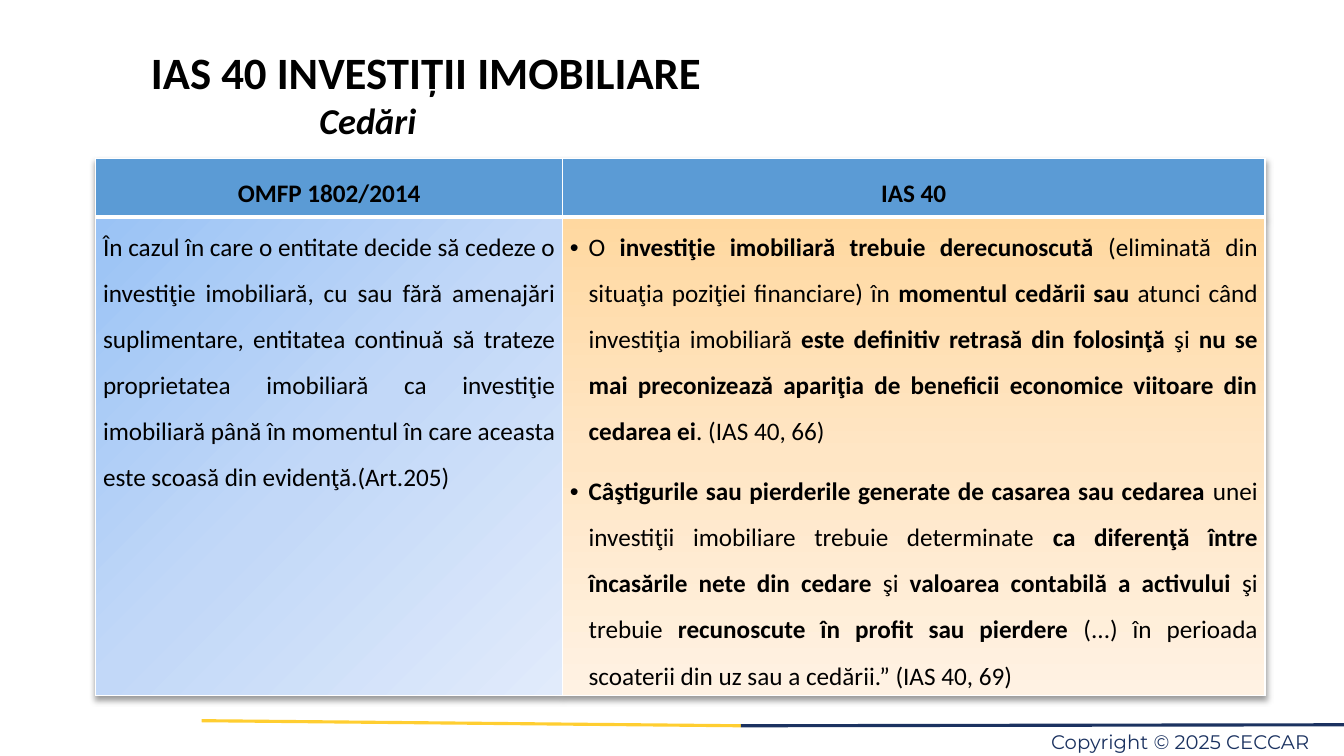
from lxml import etree
from pptx import Presentation
from pptx.dml.color import RGBColor
from pptx.enum import shapes, text
from pptx.oxml import ns
from pptx.util import Pt

BLACK = RGBColor(0x00, 0x00, 0x00)
WHITE = RGBColor(0xFF, 0xFF, 0xFF)
GOLD = RGBColor(0xFF, 0xCE, 0x31)
NAVY = RGBColor(0x1B, 0x32, 0x60)
BLUE = RGBColor(0x5B, 0x9B, 0xD5)
SKY = [RGBColor(0x9A, 0xC3, 0xF5), RGBColor(0xC2, 0xD8, 0xF8), RGBColor(0xE1, 0xEB, 0xFB)]
PEACH = [RGBColor(0xFF, 0xD8, 0xA0), RGBColor(0xFF, 0xE6, 0xC5), RGBColor(0xFF, 0xF2, 0xE3)]
MID, RIGHT, FULL = text.PP_ALIGN.CENTER, text.PP_ALIGN.RIGHT, text.PP_ALIGN.JUSTIFY

HEADS = ["OMFP 1802/2014", "IAS 40"]
LOCAL = ["În cazul în care o entitate decide să cedeze o investiţie imobiliară, cu sau fără "
         "amenajări suplimentare, entitatea continuă să trateze proprietatea imobiliară ca "
         "investiţie imobiliară până în momentul în care aceasta este scoasă din "
         "evidenţă.(Art.205)"]
GLOBAL = ["O *investiţie imobiliară trebuie derecunoscută* (eliminată din situaţia poziţiei "
          "financiare) în *momentul cedării sau* atunci când investiţia imobiliară *este "
          "definitiv retrasă din folosinţă* şi *nu se mai preconizează apariţia de beneficii "
          "economice viitoare din cedarea ei*. (IAS 40, 66)",
          "*Câştigurile sau pierderile generate de casarea sau cedarea* unei investiţii "
          "imobiliare trebuie determinate *ca diferenţă între încasările nete din cedare* şi "
          "*valoarea contabilă a activului* şi trebuie *recunoscute în profit sau pierdere "
          "*(...) în perioada scoaterii din uz sau a cedării.” (IAS 40, 69)"]


class Deck:
    font = "Calibri"

    def __init__(self, wide, high):
        self.prs = Presentation()
        self.prs.slide_width, self.prs.slide_height = Pt(wide), Pt(high)
        self.slide = self.prs.slides.add_slide(self.prs.slide_layouts[6])

    def add(self, parent, tag, **attrs):
        node = etree.SubElement(parent, ns.qn(tag))
        for key, val in attrs.items():
            node.set(key, str(val))
        return node

    def line(self, x1, y1, x2, y2, color):
        line = self.slide.shapes.add_connector(
            shapes.MSO_CONNECTOR.STRAIGHT, Pt(x1), Pt(y1), Pt(x2), Pt(y2))
        line.line.color.rgb = color
        line.line.width = Pt(2.25)
        self.add(line.element.spPr, "a:effectLst")

    def prose(self, frame, paras, size, align, space, color=BLACK, font=None,
              slant=None, bullet=False, indent=0):
        for i, words in enumerate(paras):
            para = frame.add_paragraph() if i else frame.paragraphs[0]
            props = para._p.get_or_add_pPr()
            if bullet:
                indent = 13.5
                props.set("indent", str(-Pt(indent)))
                self.add(props, "a:buFont", typeface="Arial")
                self.add(props, "a:buChar", char="•")
            if indent:
                props.set("marL", str(Pt(indent)))
            para.alignment, para.line_spacing = align, space
            if i:
                para.space_before = Pt(10)
            for j, part in enumerate(words.split("*")):
                if part:
                    run = para.add_run()
                    run.text = part
                    run.font.name, run.font.size = font or self.font, Pt(size)
                    run.font.bold, run.font.italic = j % 2 == 1, slant
                    run.font.color.rgb = color

    def label(self, x, y, wide, high, words, size, align, space, inset=True, **style):
        box = self.slide.shapes.add_textbox(Pt(x), Pt(y), Pt(wide), Pt(high))
        frame = box.text_frame
        frame.word_wrap = True
        if not inset:
            frame.margin_left = frame.margin_right = Pt(0)
            frame.margin_top = frame.margin_bottom = Pt(0)
        self.prose(frame, [words], size, align, space, **style)

    def table(self, x, y, cols, rows):
        frame = self.slide.shapes.add_table(
            len(rows), len(cols), Pt(x), Pt(y), Pt(sum(cols)), Pt(sum(rows)))
        table = frame.table
        table.first_row = table.horz_banding = False
        for col, wide in zip(table.columns, cols):
            col.width = Pt(wide)
        for row, high in zip(table.rows, rows):
            row.height = Pt(high)
        props = table._tbl.tblPr
        glow = self.add(props, "a:effectLst")
        cast = self.add(glow, "a:outerShdw", blurRad=Pt(4), dist=Pt(3), dir=5400000)
        shade = self.add(cast, "a:srgbClr", val=BLACK)
        self.add(shade, "a:alpha", val=40000)
        props.insert(0, glow)
        return table

    def edge(self, cell, top, base):
        props = cell._tc.get_or_add_tcPr()
        for side, wide in zip("LRTB", (1, 1, top, base)):
            line = self.add(props, "a:ln" + side, w=Pt(wide))
            self.add(self.add(line, "a:solidFill"), "a:srgbClr", val=WHITE)

    def head(self, cell, words):
        self.edge(cell, 1, 3)
        cell.fill.solid()
        cell.fill.fore_color.rgb = BLUE
        self.prose(cell.text_frame, [f"*{words}*"], 18, MID, 1.5)

    def body(self, cell, paras, tints, angle, bullet):
        self.edge(cell, 3, 1)
        cell.margin_left = cell.margin_right = Pt(5.2)
        cell.margin_top = cell.margin_bottom = Pt(0)
        fill = self.add(cell._tc.get_or_add_tcPr(), "a:gradFill", rotWithShape=1)
        stops = self.add(fill, "a:gsLst")
        for i, tint in enumerate(tints):
            stop = self.add(stops, "a:gs", pos=i * 50000)
            self.add(stop, "a:srgbClr", val=tint)
        self.add(fill, "a:lin", ang=angle * 60000, scaled=0)
        self.prose(cell.text_frame, paras, 18, FULL, 1.5, bullet=bullet)


def main():
    deck = Deck(960, 540)
    deck.line(144, 514.8, 529.2, 518.4, GOLD)
    deck.line(529.2, 518.4, 960, 517.7, NAVY)
    deck.label(656, 517.7, 283, 19.5, "Copyright © 2025 CECCAR ", 14, RIGHT, Pt(20.5),
               inset=False, color=NAVY, font="Montserrat")
    deck.label(149, 51, 630, 355.7, "*Cedări*", 26, FULL, 1.5, slant=True, indent=72)
    deck.label(0, 32.4, 609, 64, "*IAS 40 INVESTIȚII IMOBILIARE*", 32, MID, 0.9)
    table = deck.table(68.4, 113, [333.4, 501.8], [41.8, 342])
    for i, words in enumerate(HEADS):
        deck.head(table.cell(0, i), words)
    deck.body(table.cell(1, 0), LOCAL, SKY, 45, False)
    deck.body(table.cell(1, 1), GLOBAL, PEACH, 90, True)
    deck.prs.save("out.pptx")


if __name__ == "__main__":
    main()
